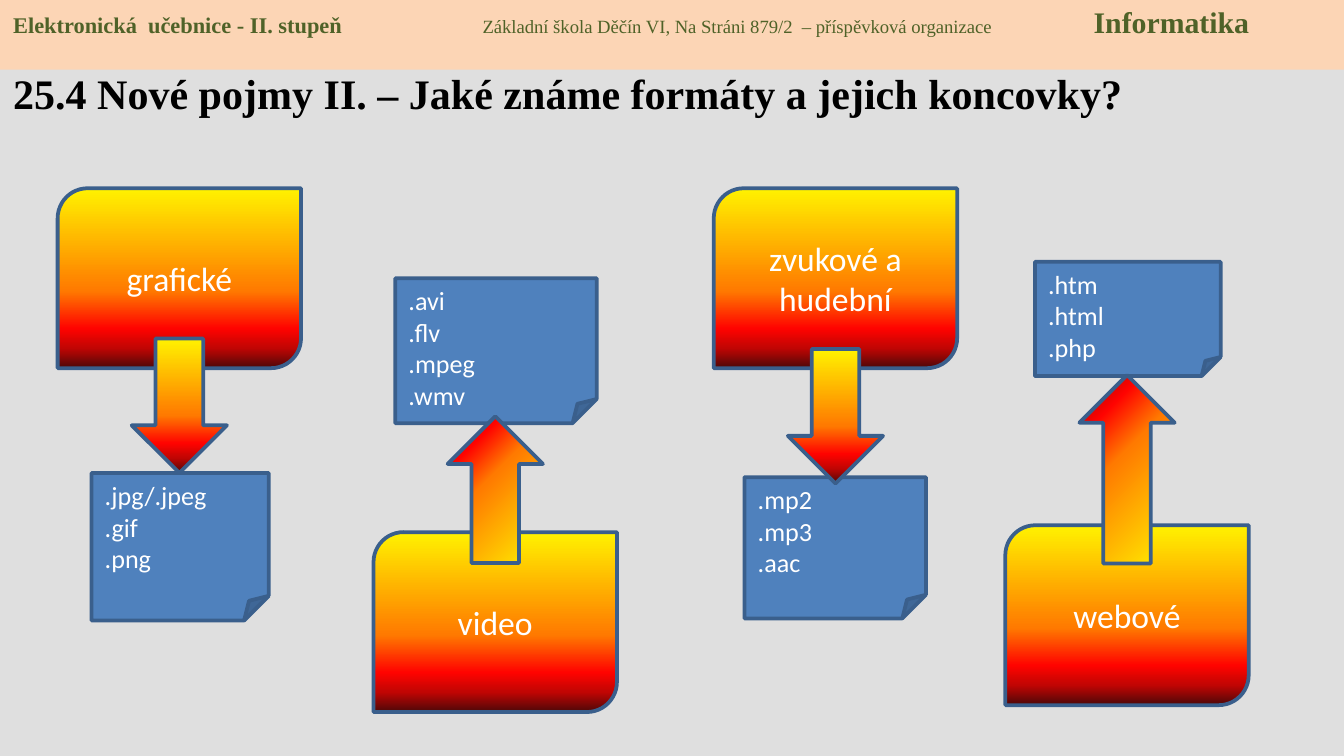
from lxml import etree
from pptx import Presentation
from pptx.dml.color import RGBColor
from pptx.enum.shapes import MSO_SHAPE
from pptx.enum.text import MSO_ANCHOR, PP_ALIGN
from pptx.oxml.ns import qn
from pptx.util import Cm, Pt

HEADER_SHAPE = MSO_SHAPE.RECTANGLE
NOTE_SHAPE = MSO_SHAPE.FOLDED_CORNER
CATEGORY_SHAPE = MSO_SHAPE.ROUND_2_DIAG_RECTANGLE
ARROW_SHAPE = MSO_SHAPE.DOWN_ARROW
TOP, MIDDLE = MSO_ANCHOR.TOP, MSO_ANCHOR.MIDDLE
LEFT, CENTER = PP_ALIGN.LEFT, PP_ALIGN.CENTER

COLORS = {
    "background": "DFDFDF",
    "header": "FCD5B5",
    "header_text": "4F6228",
    "title": "000000",
    "note": "4F81BD",
    "outline": "3A5F8C",
    "label": "FFFFFF",
}
FIRE = [(0, "FFF200"), (57, "FF7A00"), (78, "FF0300"), (89, "C00503"), (100, "4D0808")]
SERIF, SANS = "Times New Roman", "Calibri"
CATEGORY_WIDTH, CATEGORY_HEIGHT, ARROW_WIDTH = 4.6, 3.4, 1.8

HEADER_PARTS = [
    ("Elektronická  učebnice - II. stupeň", 12, True),
    ("\tZákladní škola Děčín VI, Na Stráni 879/2  – příspěvková organizace", 10, False),
    ("\tInformatika", 16, True),
]
HEADER_TABS = [8.87, 20.42]
NOTES = [
    (14.07, 9.02, 3.43, 2.67, ".mp2\n.mp3\n.aac"),
    (1.73, 8.94, 3.35, 2.79, ".jpg/.jpeg\n.gif\n.png"),
    (7.47, 5.26, 3.81, 2.74, ".avi\n.flv\n.mpeg\n.wmv"),
    (19.56, 4.95, 3.51, 2.16, ".htm\n.html\n.php"),
]
CATEGORIES = [
    (1.09, 3.56, "grafické", 6.4, 2.54, False),
    (13.49, 3.56, "zvukové a hudební", 6.6, 2.54, False),
    (7.06, 10.06, "video", 7.87, 2.77, True),
    (19, 9.93, "webové", 7.09, 3.56, True),
]


def color(name):
    return RGBColor.from_string(COLORS[name])


def style_font(font, name, size, color_name, bold=False):
    font.name, font.size, font.bold = name, Pt(size), bold
    font.color.rgb = color(color_name)


def write_text(shape, text, name, size, color_name, anchor, alignment, bold=False):
    frame = shape.text_frame
    frame.word_wrap = True
    frame.vertical_anchor = anchor
    frame.text = text
    for para in frame.paragraphs:
        para.alignment = alignment
        for span in para.runs:
            style_font(span.font, name, size, color_name, bold)


def add_shape(page, kind, left, top, width, height):
    shape = page.shapes.add_shape(kind, Cm(left), Cm(top), Cm(width), Cm(height))
    shape.shadow.inherit = False
    shape.line.color.rgb = color("outline")
    shape.line.width = Pt(2)
    return shape


def fill_with_fire(shape, radial=False):
    shape.fill.gradient()
    gradient = shape._element.spPr.find(qn("a:gradFill"))
    for child in list(gradient):
        gradient.remove(child)
    stops = etree.SubElement(gradient, qn("a:gsLst"))
    for position, value in FIRE:
        stop = etree.SubElement(stops, qn("a:gs"), pos=str(position * 1000))
        etree.SubElement(stop, qn("a:srgbClr"), val=value)
    if radial:
        circle = etree.SubElement(gradient, qn("a:path"), path="circle")
        etree.SubElement(circle, qn("a:fillToRect"), l="100000", t="100000")
    else:
        etree.SubElement(gradient, qn("a:lin"), ang="5400000", scaled="0")


def add_title(page):
    box = page.shapes.add_textbox(0, Cm(1.17), Cm(22.86), Cm(1.17))
    write_text(box, "25.4 Nové pojmy II. – Jaké známe formáty a jejich koncovky?",
               SERIF, 22.5, "title", MIDDLE, LEFT, True)


def add_header(page):
    header = add_shape(page, HEADER_SHAPE, 0, -0.05, 25.4, 1.37)
    header.fill.solid()
    header.fill.fore_color.rgb = color("header")
    header.line.fill.background()
    frame = header.text_frame
    frame.word_wrap = True
    frame.vertical_anchor = TOP
    para = frame.paragraphs[0]
    para.alignment = LEFT
    tabs = etree.SubElement(para._p.get_or_add_pPr(), qn("a:tabLst"))
    for position in HEADER_TABS:
        etree.SubElement(tabs, qn("a:tab"), pos=str(Cm(position)), algn="l")
    for text, size, bold in HEADER_PARTS:
        span = para.add_run()
        span.text = text
        style_font(span.font, SERIF, size, "header_text", bold)


def add_note(page, left, top, width, height, text):
    note = add_shape(page, NOTE_SHAPE, left, top, width, height)
    note.fill.solid()
    note.fill.fore_color.rgb = color("note")
    write_text(note, text, SANS, 14, "label", TOP, LEFT)


def add_category(page, left, top, text):
    category = add_shape(page, CATEGORY_SHAPE, left, top, CATEGORY_WIDTH, CATEGORY_HEIGHT)
    fill_with_fire(category)
    write_text(category, text, SANS, 18, "label", MIDDLE, CENTER)


def add_arrow(page, category_left, top, height, upward):
    left = category_left + (CATEGORY_WIDTH - ARROW_WIDTH) / 2
    arrow = add_shape(page, ARROW_SHAPE, left, top, ARROW_WIDTH, height)
    arrow.rotation = 180 if upward else 0
    fill_with_fire(arrow, radial=upward)


def main():
    deck = Presentation()
    deck.slide_width, deck.slide_height = Cm(25.4), Cm(14.29)
    page = deck.slides.add_slide(deck.slide_layouts[6])
    page.background.fill.solid()
    page.background.fill.fore_color.rgb = color("background")
    add_title(page)
    add_header(page)
    for note in NOTES:
        add_note(page, *note)
    for left, top, text, *_ in CATEGORIES:
        add_category(page, left, top, text)
    for left, _, _, top, height, upward in CATEGORIES:
        add_arrow(page, left, top, height, upward)
    deck.save("out.pptx")


if __name__ == "__main__":
    main()
